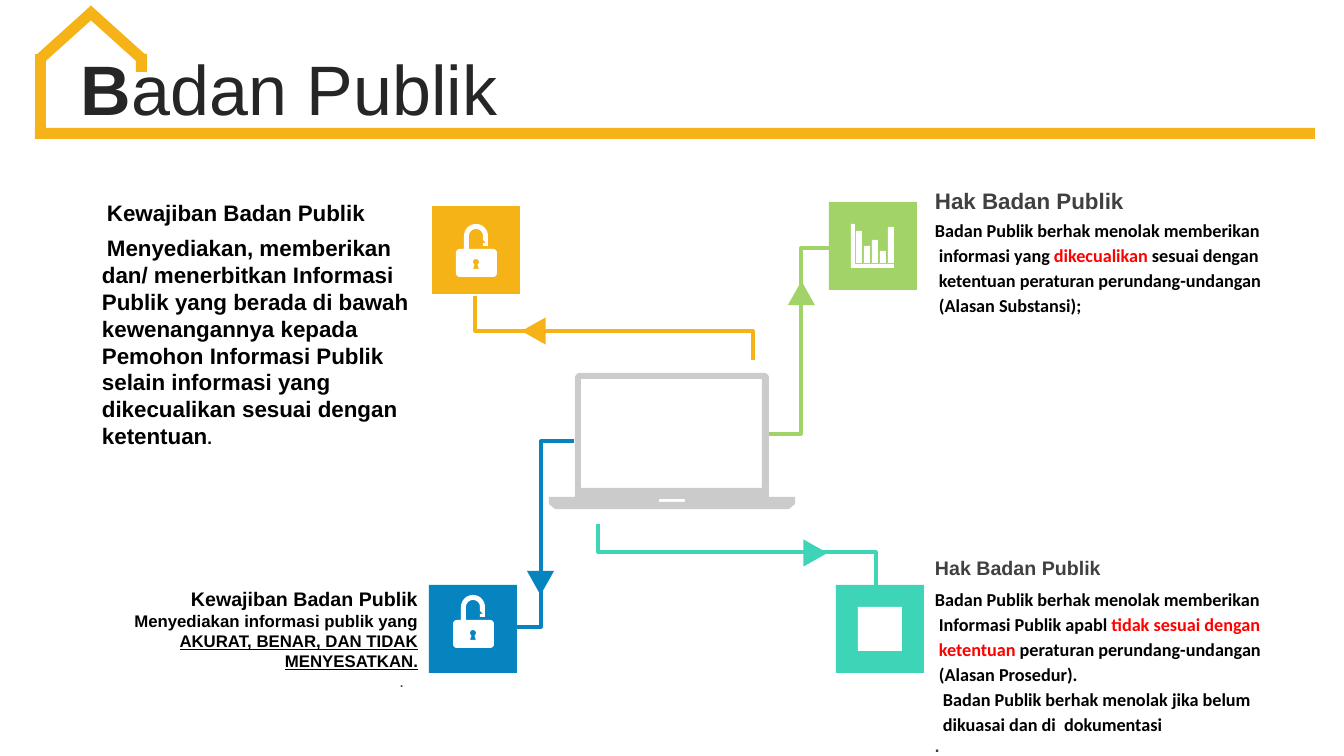
from math import cos, radians, sin

from pptx import Presentation
from pptx.dml.color import RGBColor
from pptx.enum.shapes import MSO_SHAPE
from pptx.enum.text import MSO_ANCHOR, PP_ALIGN
from pptx.util import Emu, Pt

RECT, TRIANGLE = MSO_SHAPE.RECTANGLE, MSO_SHAPE.ISOSCELES_TRIANGLE
LEFT, RIGHT, JUSTIFY = PP_ALIGN.LEFT, PP_ALIGN.RIGHT, PP_ALIGN.JUSTIFY
TOP, MIDDLE = MSO_ANCHOR.TOP, MSO_ANCHOR.MIDDLE
EMU_PER_PX = 914400 / 100.8

COLORS = {
    "orange": "F5B317", "blue": "0684BF", "green": "A2D368", "teal": "3ED4B7",
    "grey": "CBCBCB", "white": "FFFFFF", "black": "000000", "red": "FF0000",
    "title": "262626", "heading": "404040",
}

# House outline around the title: box, rotation
HOUSE = [
    ((35, 128, 1280, 11), 0),
    ((35, 54, 11, 81), 0),
    ((136, 54, 11, 18), 0),
    ((61, -3, 11, 76), 48),
    ((110, -3, 11, 76), -48),
]

# Branches: colour, route, arrow position, arrow rotation, tile position
TILE = 88
ARROW = (27, 24)
BRANCHES = [
    ("blue", [(574, 441), (541, 441), (541, 627), (514, 627)], (527, 571), 180, (429, 585)),
    ("green", [(769, 434), (801, 434), (801, 248), (829, 248)], (788, 281), 0, (829, 202)),
    ("teal", [(598, 524), (598, 552), (876, 552), (876, 588)], (802, 541), 90, (836, 585)),
    ("orange", [(753, 360), (753, 331), (475, 331), (475, 296)], (520, 319), 270, (432, 206)),
]
PADLOCKS = [(456, 224), (453, 595)]
BAR_ICON = (851, 224)
BAR_TOPS = [7, 22, 16, 27, 3]
CODE_ICON = (858, 607, 44, 44)

# Text: runs are (text, changes to the block's font); paragraphs are (runs, format)
HEADING = {"size": 16, "color": "heading"}
RIGHTS = {"font": "Calibri", "size": 13}
RED = {"color": "red"}
GAP = {"before": 2.3}
STEP = {**GAP, "left": 4}
STEP_2 = {**GAP, "left": 8}
DUTY = {"left": 26, "first": 5, "before": 6}
TEXTS = [
    ((71, 55, 1241, 80), {"size": 50, "color": "title", "bold": False}, LEFT, MIDDLE, [
        ([("B", {"bold": True}), ("adan Publik", {})], {"before": 10, "line": 0.8}),
    ]),
    ((925, 214, 353, 132), RIGHTS, JUSTIFY, TOP, [
        ([("Badan Publik berhak menolak memberikan", {})], GAP),
        ([("informasi yang ", {}), ("dikecualikan", RED), (" sesuai dengan", {})], STEP),
        ([("ketentuan peraturan perundang-undangan", {})], STEP),
        ([("(Alasan Substansi);", {})], STEP),
    ]),
    ((925, 182, 353, 37), HEADING, LEFT, TOP, [([("Hak Badan Publik", {})], {})]),
    ((925, 583, 353, 184), RIGHTS, LEFT, TOP, [
        ([("Badan Publik berhak menolak memberikan", {})], GAP),
        ([("Informasi Publik apabl ", {}), ("tidak sesuai dengan", RED)], STEP),
        ([("ketentuan ", RED), ("peraturan perundang-undangan", {})], STEP),
        ([("(Alasan Prosedur).", {})], STEP),
        ([("Badan Publik berhak menolak jika belum", {})], STEP_2),
        ([("dikuasai dan di  dokumentasi", {})], STEP_2),
        ([(".", {"font": "Arial", "size": 12, "color": "heading"})], {}),
    ]),
    ((925, 551, 353, 34), {**HEADING, "size": 14}, LEFT, TOP,
     [([("Hak Badan Publik", {})], {})]),
    ((75, 582, 353, 117), {"size": 12}, RIGHT, TOP, [
        ([("Kewajiban Badan Publik", {"size": 14})], {}),
        ([("Menyediakan informasi publik yang ", {}),
          ("AKURAT, BENAR, DAN TIDAK MENYESATKAN.", {"underline": True})], {}),
        ([(".", {"color": "heading", "bold": False})], {"right": 14}),
    ]),
    ((66, 194, 353, 263), {"size": 16}, LEFT, TOP, [
        ([("Kewajiban Badan Publik", {})], DUTY),
        ([("Menyediakan, memberikan dan/ menerbitkan Informasi Publik yang berada "
           "di bawah kewenangannya kepada Pemohon Informasi Publik selain informasi "
           "yang dikecualikan sesuai dengan ketentuan", {}), (".", {"size": 12})], DUTY),
    ]),
]


def px(value):
    return Emu(round(value * EMU_PER_PX))


def rgb(name):
    return RGBColor.from_string(COLORS[name])


def paint(shape, color):
    shape.shadow.inherit = False
    shape.fill.solid()
    shape.fill.fore_color.rgb = rgb(color)
    shape.line.fill.background()


def add_block(kind, box, color, rotation=0):
    block = slide.shapes.add_shape(kind, *map(px, box))
    block.rotation = rotation
    paint(block, color)


def arc(cx, cy, radius, start, end):
    angles = [radians(start + (end - start) * i / 16) for i in range(17)]
    return [(cx + radius * cos(a), cy + radius * sin(a)) for a in angles]


def rect(left, top, right, bottom):
    return [(left, top), (right, top), (right, bottom), (left, bottom)]


def add_outline(contours, at=(0, 0), close=True):
    placed = [[(px(x + at[0]), px(y + at[1])) for x, y in points] for points in contours]
    builder = slide.shapes.build_freeform(*placed[0][0], scale=1.0)
    for points in placed:
        builder.move_to(*points[0])
        builder.add_line_segments(points[1:], close=close)
    return builder.convert_to_shape()


def add_text(box, base, align, anchor, paragraphs):
    frame = slide.shapes.add_textbox(*map(px, box)).text_frame
    frame.word_wrap = True
    frame.vertical_anchor = anchor
    for i, (runs, layout) in enumerate(paragraphs):
        paragraph = frame.paragraphs[0] if i == 0 else frame.add_paragraph()
        paragraph.alignment = align
        paragraph.space_before = Pt(layout.get("before", 0))
        paragraph.line_spacing = layout.get("line", 1.0)
        margins = paragraph._p.get_or_add_pPr()
        for key, attribute in (("left", "marL"), ("right", "marR"), ("first", "indent")):
            margins.set(attribute, str(px(layout.get(key, 0))))
        for words, changes in runs:
            style = {"font": "Arial", "color": "black", "bold": True, **base, **changes}
            run = paragraph.add_run()
            run.text = words
            run.font.name = style["font"]
            run.font.size = Pt(style["size"])
            run.font.color.rgb = rgb(style["color"])
            run.font.bold = style["bold"]
            run.font.underline = style.get("underline", False)


prs = Presentation()
prs.slide_width, prs.slide_height = px(1344), px(756)
slide = prs.slides.add_slide(prs.slide_layouts[6])

# House
for box, rotation in HOUSE:
    add_block(RECT, box, "orange", rotation)

# Laptop
laptop = [
    [(575, 497), *arc(580, 378, 5, 180, 270), *arc(764, 378, 5, 270, 360), (769, 497),
     (795, 497), (795, 504), (789, 509), (555, 509), (549, 504), (549, 497)],
    rect(581, 379, 762, 488),
    rect(659, 499, 685, 502),
]
paint(add_outline(laptop), "grey")

# Branches with arrows and tiles
for color, route, arrow_at, rotation, tile_at in BRANCHES:
    branch = add_outline([route], close=False)
    branch.shadow.inherit = False
    branch.fill.background()
    branch.line.color.rgb = rgb(color)
    branch.line.width = Pt(2.25)
    add_block(TRIANGLE, (*arrow_at, *ARROW), color, rotation)
    add_block(RECT, (*tile_at, TILE, TILE), color)

# Icons
padlock = [
    [(8, 25), *arc(20, 12, 12, 180, 360), (32, 22), (27, 22), (27, 19), (30, 19), (27, 16),
     *arc(20, 12, 7, 360, 180), (13, 25), *arc(37, 29, 4, 270, 360), *arc(37, 49, 4, 0, 90),
     *arc(4, 49, 4, 90, 180), *arc(4, 29, 4, 180, 270)],
    [*arc(20, 38, 3, 120, 420), (23, 45), (17, 45)],
]
for at in PADLOCKS:
    paint(add_outline(padlock, at), "white")
axes = [(0, 0), (4, 0), (4, 40), (43, 40), (43, 44), (0, 44)]
bars = [rect(5 + 8 * i, top, 11 + 8 * i, 39) for i, top in enumerate(BAR_TOPS)]
paint(add_outline([axes, *bars], BAR_ICON), "white")
add_block(RECT, CODE_ICON, "white")

# Texts
for text in TEXTS:
    add_text(*text)

prs.save("out.pptx")
